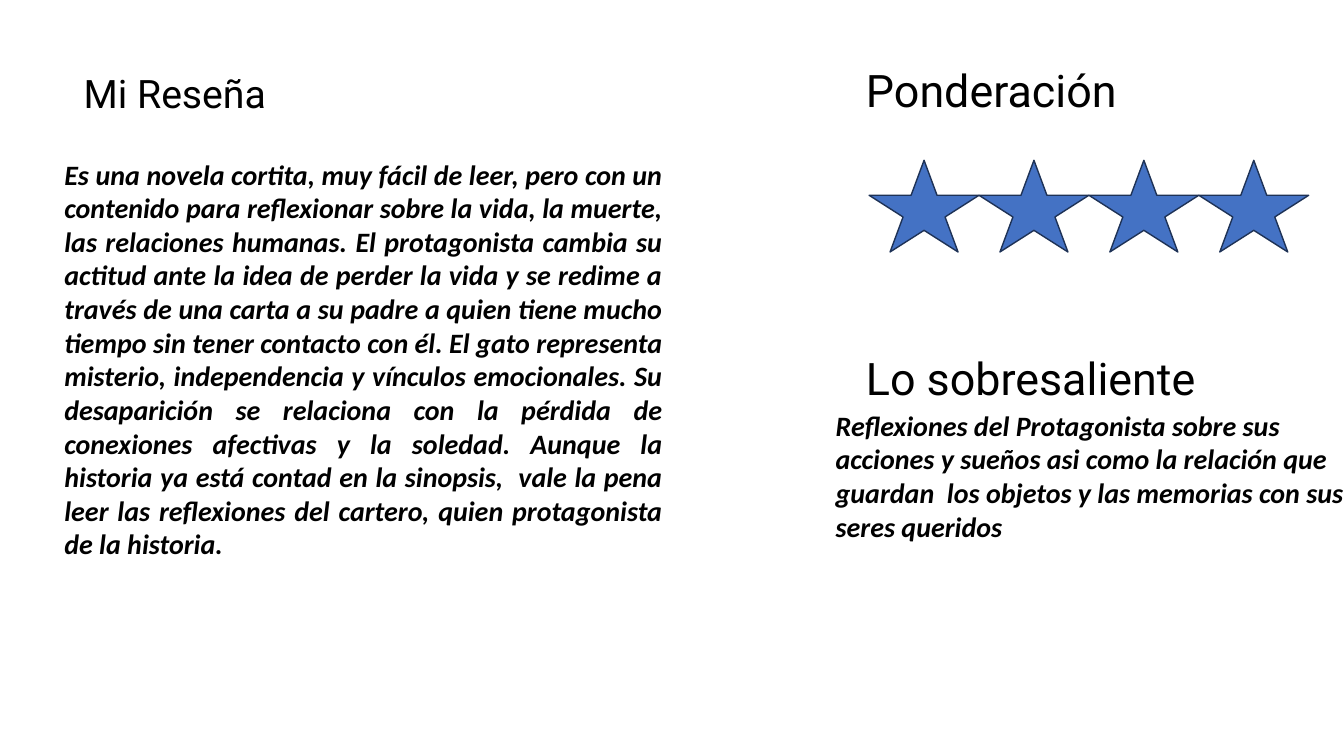
import pptx
import pptx.util
import pptx.dml.color
import pptx.enum.shapes
import pptx.enum.text

Inches = pptx.util.Inches
ALIGN = pptx.enum.text.PP_ALIGN
COLORS = {"text": "000000", "star": "4472C4", "edge": "1E3256"}
REVIEW = (
    "Es una novela cortita, muy fácil de leer, pero con un contenido para "
    "reflexionar sobre la vida, la muerte, las relaciones humanas. El "
    "protagonista cambia su actitud ante la idea de perder la vida y se redime "
    "a través de una carta a su padre a quien tiene mucho tiempo sin tener "
    "contacto con él. El gato representa misterio, independencia y vínculos "
    "emocionales. Su desaparición se relaciona con la pérdida de conexiones "
    "afectivas y la soledad. Aunque la historia ya está contad en la sinopsis,  "
    "vale la pena leer las reflexiones del cartero, quien protagonista de la "
    "historia."
)
MERIT = (
    "Reflexiones del Protagonista sobre sus acciones y sueños asi como la "
    "relación que guardan  los objetos y las memorias con sus seres queridos"
)


def color(name):
    """Return the named colour."""
    return pptx.dml.color.RGBColor.from_string(COLORS[name])


def place(shape, box):
    """Move a shape to a box given in inches."""
    shape.left, shape.top, shape.width, shape.height = map(Inches, box)


def write(shape, text, face, size, strong=False, align=ALIGN.LEFT):
    """Fill a shape with one formatted paragraph."""
    frame = shape.text_frame
    frame.text = text
    frame.word_wrap = True
    frame.auto_size = pptx.enum.text.MSO_AUTO_SIZE.NONE
    frame.vertical_anchor = pptx.enum.text.MSO_ANCHOR.TOP
    para = frame.paragraphs[0]
    para.alignment = align
    font = para.runs[0].font
    font.name = face
    font.size = pptx.util.Pt(size)
    font.bold = font.italic = strong
    font.color.rgb = color("text")


def head(slide, box, text):
    """Add a section heading."""
    write(slide.shapes.add_textbox(*map(Inches, box)), text, "Roboto", 32)


def prose(slide, box, text, align=ALIGN.LEFT):
    """Add a bold italic paragraph."""
    area = slide.shapes.add_textbox(*map(Inches, box))
    write(area, text, "Calibri", 20, True, align)


def review(slide, box):
    """Build the review column with the slide title."""
    left, top, width, height = box
    title = slide.shapes.title
    place(title, (left + 0.19, top, 3.61, 0.57))
    write(title, "Mi Reseña", "Roboto", 28)
    prose(slide, (left, top + 0.87, width, height - 0.87), REVIEW, ALIGN.JUSTIFY)


def rating(slide, box, count=4):
    """Build the rating heading and its row of stars."""
    left, top, width, height = box
    head(slide, (left, top, 4.11, 0.64), "Ponderación")
    step = (width - 0.13) / count
    for i in range(count):
        spot = (left + 0.13 + i * step, top + 1.02, step, height - 1.02)
        star = slide.shapes.add_shape(
            pptx.enum.shapes.MSO_SHAPE.STAR_5_POINT, *map(Inches, spot))
        star.shadow.inherit = False
        star.fill.solid()
        star.fill.fore_color.rgb = color("star")
        star.line.color.rgb = color("edge")
        star.line.width = pptx.util.Pt(1)


def merit(slide, box):
    """Build the highlights heading and paragraph."""
    left, top, width, height = box
    head(slide, (left + 0.3, top, 4.49, 0.64), "Lo sobresaliente")
    prose(slide, (left, top + 0.57, width, height - 0.57), MERIT)


def main():
    """Build and save the slide."""
    deck = pptx.Presentation()
    deck.slide_width, deck.slide_height = Inches(13.33), Inches(7.5)
    slide = deck.slides.add_slide(deck.slide_layouts[5])
    review(slide, (0.54, 0.64, 6.13, 5.01))
    rating(slide, (8.49, 0.57, 4.49, 1.93))
    merit(slide, (8.19, 3.43, 5.24, 2.02))
    deck.save("out.pptx")


if __name__ == "__main__":
    main()
